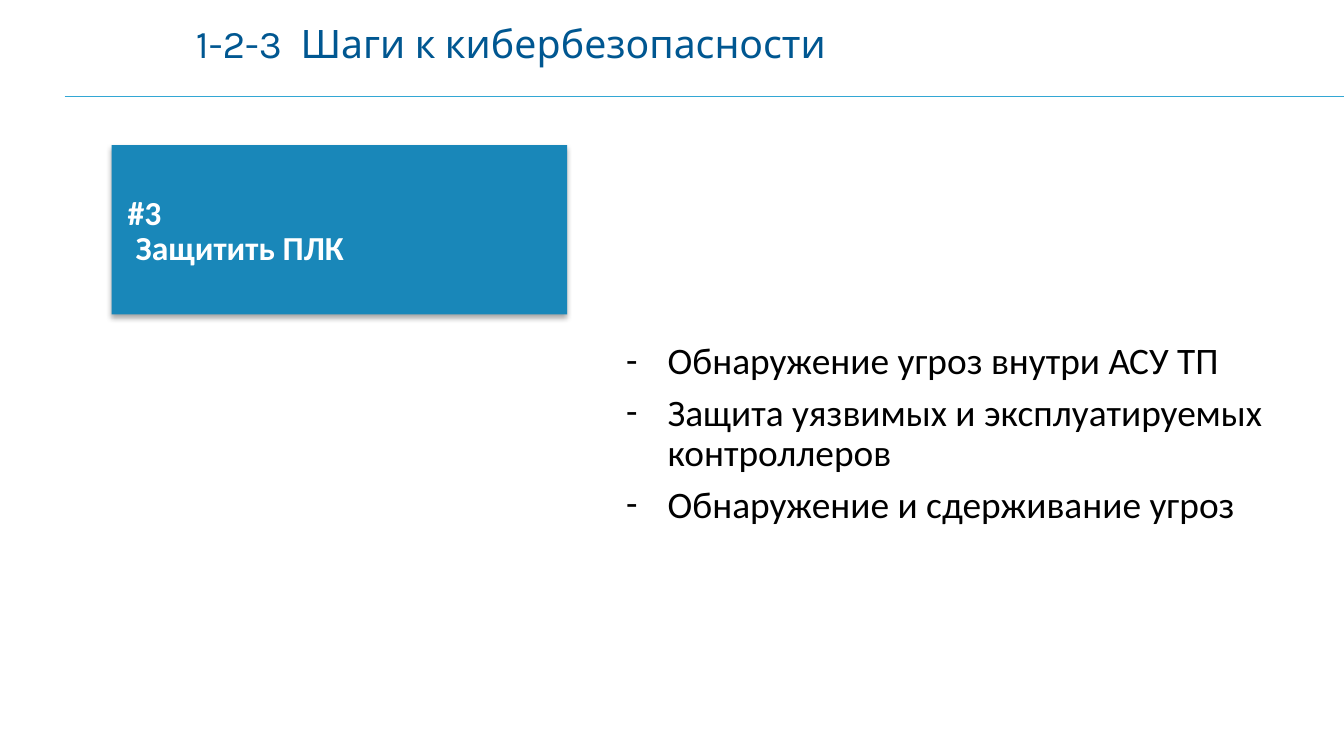
from lxml import etree
from pptx import Presentation
from pptx.dml.color import RGBColor
from pptx.enum.shapes import MSO_CONNECTOR, MSO_SHAPE
from pptx.enum.text import MSO_ANCHOR
from pptx.oxml.ns import qn
from pptx.util import Inches, Pt

STRAIGHT = MSO_CONNECTOR.STRAIGHT
RECT = MSO_SHAPE.RECTANGLE
MIDDLE, TOP = MSO_ANCHOR.MIDDLE, MSO_ANCHOR.TOP

W = 10
H = W * 9 / 16
COLORS = {"title": "005791", "rule": "33A7D4", "card": "1987B9",
          "white": "FFFFFF", "black": "000000"}
BULLETS = [
    "Обнаружение угроз внутри АСУ ТП",
    "Защита уязвимых и эксплуатируемых \nконтроллеров",
    "Обнаружение и сдерживание угроз",
]


def rgb(name):
    return RGBColor.from_string(COLORS[name])


def inches(box):
    return [Inches(v) for v in box]


def add_text_frame(s, box, anchor):
    tf = s.shapes.add_textbox(*inches(box)).text_frame
    tf.word_wrap, tf.vertical_anchor = True, anchor
    return tf


def add_run(p, text, size, font, color, bold=False):
    r = p.add_run()
    r.text = text
    r.font.size, r.font.name, r.font.bold = Pt(size), font, bold
    r.font.color.rgb = rgb(color)
    return r


def set_indent(p, left, first=0):
    pPr = p._p.get_or_add_pPr()
    pPr.set("marL", str(Inches(left)))
    pPr.set("indent", str(Inches(first)))
    return pPr


def add_effects(sp):
    return etree.SubElement(sp._element.spPr, qn("a:effectLst"))


def add_header(s, box, rule_x, rule_y):
    # Title, with a widened space after the number
    p = add_text_frame(s, box, MIDDLE).paragraphs[0]
    add_run(p, "1-2-3", 21, "Karla", "title")
    gap = add_run(p, " ", 21, "Karla", "title")
    gap.font._element.set("spc", "500")
    add_run(p, "Шаги к кибербезопасности", 21, "Karla", "title")
    # Rule below the title
    line = s.shapes.add_connector(STRAIGHT, *inches((rule_x, rule_y, W, rule_y)))
    line.line.color.rgb, line.line.width = rgb("rule"), Pt(0.5)
    add_effects(line)


def add_step_card(s, box):
    # Card with a soft shadow
    sp = s.shapes.add_shape(RECT, *inches(box))
    sp.fill.solid()
    sp.fill.fore_color.rgb = rgb("card")
    sp.line.fill.background()
    shadow = etree.SubElement(
        add_effects(sp), qn("a:outerShdw"), blurRad=str(Pt(3.1)),
        dist=str(Pt(1.8)), dir="5400000", rotWithShape="0")
    color = etree.SubElement(shadow, qn("a:srgbClr"), val=COLORS["black"])
    etree.SubElement(color, qn("a:alpha"), val="35000")
    # Step number and name
    tf = add_text_frame(s, box, MIDDLE)
    tf.margin_left = tf.margin_right = Inches(0.12)
    tf.margin_top = tf.margin_bottom = 0
    add_run(tf.paragraphs[0], "#3", 18, "Calibri", "white", True)
    p = tf.add_paragraph()
    set_indent(p, 0.06)
    p.line_spacing = 0.9
    add_run(p, "Защитить ПЛК", 18, "Calibri", "white", True)


def add_measures(s, box):
    # Dashed list
    tf = add_text_frame(s, box, TOP)
    for i, text in enumerate(BULLETS):
        p = tf.add_paragraph() if i else tf.paragraphs[0]
        p.level, p.line_spacing, p.space_after = 1, 0.9, Pt(6)
        pPr = set_indent(p, 0.81, -0.31)
        etree.SubElement(pPr, qn("a:buFont"), typeface="Calibri")
        etree.SubElement(pPr, qn("a:buChar"), char="-")
        for j, part in enumerate(text.split("\n")):
            if j:
                p.add_line_break()
            add_run(p, part, 20, "Calibri", "black")


def main():
    prs = Presentation()
    prs.slide_width, prs.slide_height = Inches(W), Inches(H)
    s = prs.slides.add_slide(prs.slide_layouts[6])
    add_header(s, (1.36, 0.09, 8.58, 0.45), 0.48, 0.72)
    add_step_card(s, (0.83, 1.08, 3.39, 1.26))
    add_measures(s, (4.06, 2.5, 5.54, 1.87))
    prs.save("out.pptx")


if __name__ == "__main__":
    main()
